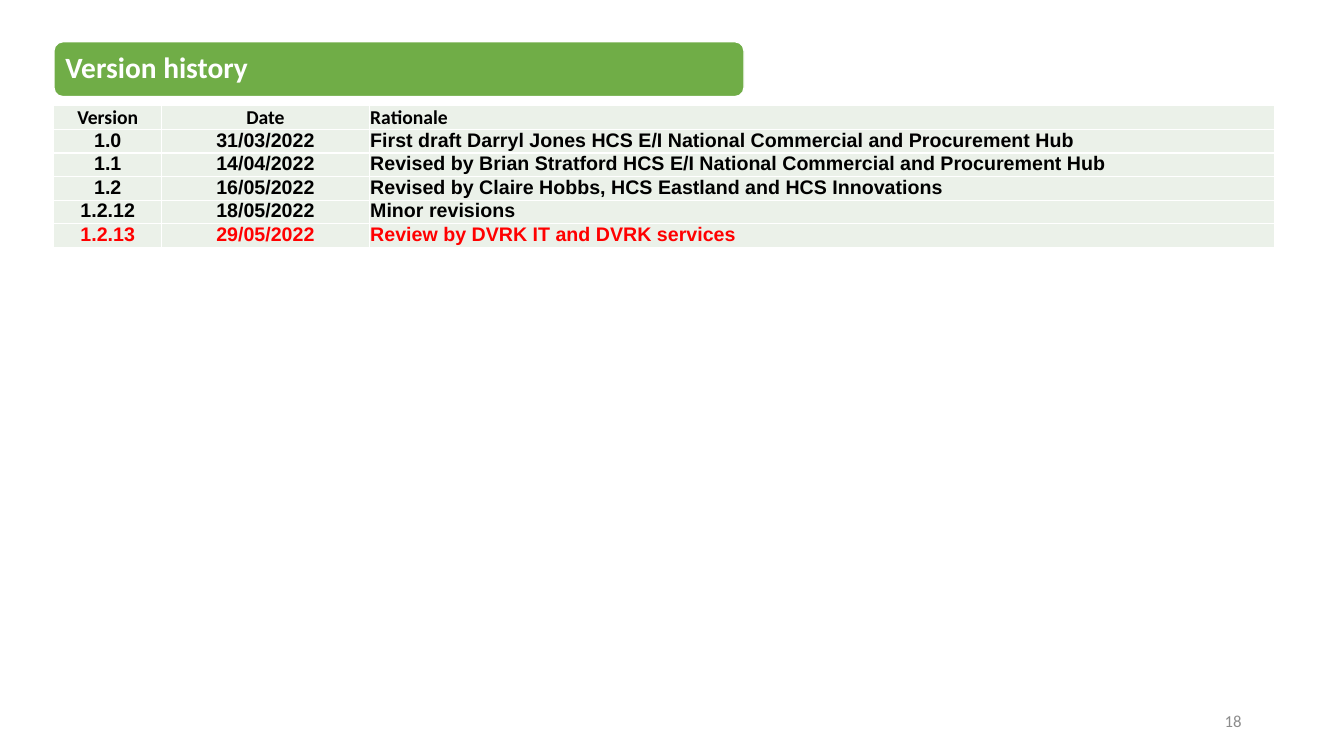
import pptx
import pptx.dml.color
import pptx.enum.shapes
import pptx.enum.text
import pptx.oxml
import pptx.oxml.ns
import pptx.util

Pt = pptx.util.Pt
ALIGN = pptx.enum.text.PP_ALIGN
ANCHOR = pptx.enum.text.MSO_ANCHOR

WHITE = pptx.dml.color.RGBColor(0xFF, 0xFF, 0xFF)
BLACK = pptx.dml.color.RGBColor(0x00, 0x00, 0x00)
RED = pptx.dml.color.RGBColor(0xFF, 0x00, 0x00)
GREY = pptx.dml.color.RGBColor(0x8C, 0x8C, 0x8C)
GREEN = pptx.dml.color.RGBColor(0x70, 0xAD, 0x47)
PALE_GREEN = pptx.dml.color.RGBColor(0xEB, 0xF1, 0xE9)

COLUMN_WIDTHS = (77, 148.3, 646.6)
COLUMN_ALIGNMENTS = (ALIGN.CENTER, ALIGN.CENTER, ALIGN.LEFT)
ROW_HEIGHT = 15
VERSIONS = (
    ("Version", "Date", "Rationale"),
    ("1.0", "31/03/2022", "First draft Darryl Jones HCS E/I National Commercial and Procurement Hub"),
    ("1.1", "14/04/2022", "Revised by Brian Stratford HCS E/I National Commercial and Procurement Hub"),
    ("1.2", "16/05/2022", "Revised by Claire Hobbs, HCS Eastland and HCS Innovations"),
    ("1.2.12", "18/05/2022", "Minor revisions"),
    ("1.2.13", "29/05/2022", "Review by DVRK IT and DVRK services"),
)


def write_text(frame, text, size, color, font="Calibri", bold=False, align=ALIGN.LEFT):
    paragraph = frame.paragraphs[0]
    paragraph.alignment = align
    run = paragraph.add_run()
    run.text = text
    run.font.name = font
    run.font.size = Pt(size)
    run.font.bold = bold
    run.font.color.rgb = color
    return paragraph


def place(shape, left, top, width, height):
    shape.left, shape.top = Pt(left), Pt(top)
    shape.width, shape.height = Pt(width), Pt(height)


def add_title(slide):
    banner = slide.shapes.add_shape(
        pptx.enum.shapes.MSO_SHAPE.ROUNDED_RECTANGLE, Pt(38.5), Pt(29.8), Pt(493), Pt(39.3))
    banner.shadow.inherit = False
    banner.fill.solid()
    banner.fill.fore_color.rgb = GREEN
    banner.line.color.rgb = WHITE
    banner.line.width = Pt(1)

    title = slide.shapes.title
    title.element.addprevious(banner.element)
    place(title, 40.4, 31.7, 489.5, 35.5)
    frame = title.text_frame
    frame.auto_size = pptx.enum.text.MSO_AUTO_SIZE.NONE
    frame.word_wrap = True
    frame.vertical_anchor = ANCHOR.MIDDLE
    frame.margin_left = frame.margin_right = Pt(6.3)
    frame.margin_top = frame.margin_bottom = Pt(6.3)
    paragraph = write_text(frame, "Version history", size=21, color=WHITE, bold=True)
    paragraph.line_spacing = 0.9


def add_borders(cell, color, width):
    properties = cell._tc.get_or_add_tcPr()
    for position, side in enumerate(("lnL", "lnR", "lnT", "lnB")):
        properties.insert(position, pptx.oxml.parse_xml(
            f'<a:{side} {pptx.oxml.ns.nsdecls("a")} w="{Pt(width)}">'
            f'<a:solidFill><a:srgbClr val="{color}"/></a:solidFill></a:{side}>'))


def add_version_table(slide):
    table = slide.shapes.add_table(
        len(VERSIONS), len(COLUMN_WIDTHS), Pt(38.5), Pt(75.6),
        Pt(sum(COLUMN_WIDTHS)), Pt(ROW_HEIGHT * len(VERSIONS))).table
    for column, width in zip(table.columns, COLUMN_WIDTHS):
        column.width = Pt(width)
    for row_index, version in enumerate(VERSIONS):
        table.rows[row_index].height = Pt(ROW_HEIGHT)
        font = "Calibri" if row_index == 0 else "Arial"
        color = RED if row_index == len(VERSIONS) - 1 else BLACK
        for column_index, text in enumerate(version):
            cell = table.cell(row_index, column_index)
            cell.margin_left = cell.margin_right = Pt(0.7)
            cell.margin_top = cell.margin_bottom = Pt(0)
            cell.fill.solid()
            cell.fill.fore_color.rgb = PALE_GREEN
            add_borders(cell, WHITE, 1)
            write_text(cell.text_frame, text, size=14, color=color, font=font,
                       bold=True, align=COLUMN_ALIGNMENTS[column_index])


def add_slide_number(slide, number):
    frame = slide.shapes.add_textbox(Pt(678), Pt(500.5), Pt(216), Pt(28.8)).text_frame
    frame.word_wrap = True
    frame.vertical_anchor = ANCHOR.MIDDLE
    write_text(frame, number, size=12, color=GREY, align=ALIGN.RIGHT)


def main():
    presentation = pptx.Presentation()
    presentation.slide_width = Pt(960)
    presentation.slide_height = Pt(540)
    slide = presentation.slides.add_slide(presentation.slide_layouts[5])
    add_slide_number(slide, "18")
    add_title(slide)
    add_version_table(slide)
    presentation.save("out.pptx")


if __name__ == "__main__":
    main()
